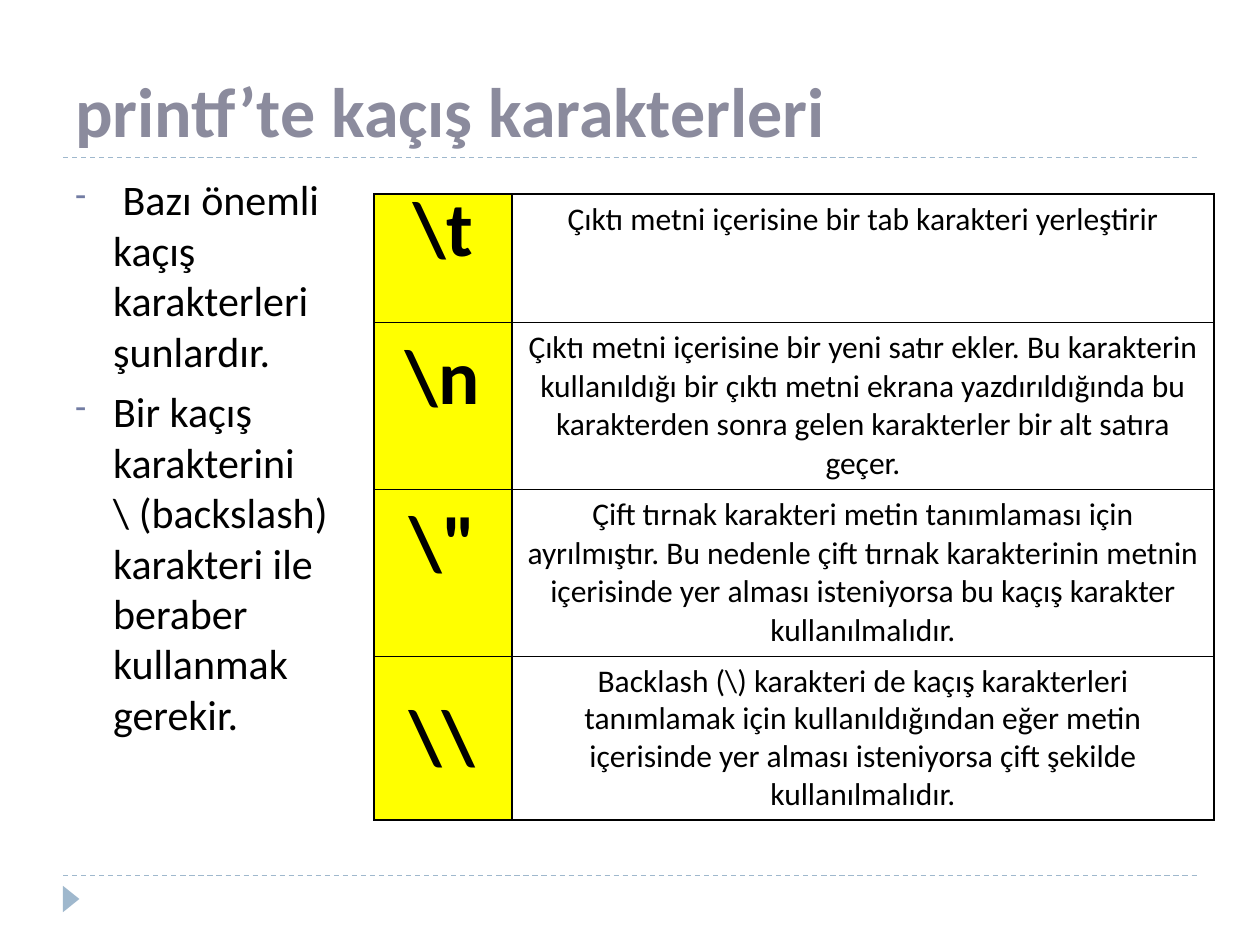
from lxml import etree
from pptx import Presentation
from pptx.dml.color import RGBColor
from pptx.enum import dml, shapes, text
from pptx.oxml import parse_xml
from pptx.oxml.ns import nsdecls, qn
from pptx.util import Pt

FONT = "Calibri"
COLORS = {"title": "8B8B9D", "ink": "000000", "rule": "9FB8CD", "bullet": "727CA3",
          "code": "FFFF00", "meaning": "FFFFFF"}

TITLE = "printf’te kaçış karakterleri"
# Each bullet is a list of lines
BULLETS = [
    [" Bazı önemli kaçış karakterleri şunlardır."],
    ["Bir kaçış karakterini", "\\ (backslash) karakteri ile beraber kullanmak gerekir."],
]
# Code, its line spacing, meaning, its line spacing, row height
TIGHT = Pt(21.6)
ESCAPES = [
    ("\\t", TIGHT, "Çıktı metni içerisine bir tab karakteri yerleştirir", None, 73.4),
    ("\\n", TIGHT, "Çıktı metni içerisine bir yeni satır ekler. Bu karakterin kullanıldığı "
     "bir çıktı metni ekrana yazdırıldığında bu karakterden sonra gelen karakterler "
     "bir alt satıra geçer.", None, 95.4),
    ("\\\"", TIGHT, "Çift tırnak karakteri metin tanımlaması için ayrılmıştır. Bu nedenle "
     "çift tırnak karakterinin metnin içerisinde yer alması isteniyorsa bu kaçış "
     "karakter kullanılmalıdır.", None, 95.4),
    ("\\\\", None, "Backlash (\\) karakteri de kaçış karakterleri tanımlamak için "
     "kullanıldığından eğer metin içerisinde yer alması isteniyorsa çift şekilde "
     "kullanılmalıdır.", TIGHT, 93.6),
]
COLUMNS = (78.8, 401.2)
RULES_Y = (90, 500.4)


def rgb(name):
    return RGBColor.from_string(COLORS[name])


def add_run(paragraph, words, size, color="ink", bold=False):
    run = paragraph.add_run()
    run.text = words
    run.font.name, run.font.size, run.font.bold = FONT, Pt(size), bold
    run.font.color.rgb = rgb(color)


def add_box(slide, left, top, width, height, anchor):
    frame = slide.shapes.add_textbox(Pt(left), Pt(top), Pt(width), Pt(height)).text_frame
    frame.word_wrap = True
    frame.vertical_anchor = anchor
    return frame


def add_dash_bullet(paragraph):
    props = paragraph._p.get_or_add_pPr()
    props.set("marL", str(Pt(21.6)))
    props.set("indent", str(-Pt(21.6)))
    color = etree.SubElement(props, qn("a:buClr"))
    etree.SubElement(color, qn("a:srgbClr"), val=COLORS["bullet"])
    etree.SubElement(props, qn("a:buSzPct"), val="76000")
    etree.SubElement(props, qn("a:buChar"), char="-")


def add_rule(slide, y):
    rule = slide.shapes.add_connector(shapes.MSO_CONNECTOR.STRAIGHT,
                                      Pt(36), Pt(y), Pt(684), Pt(y))
    rule.line.color.rgb = rgb("rule")
    rule.line.width = Pt(0.75)
    rule.line.dash_style = dml.MSO_LINE.DASH
    etree.SubElement(rule._element.spPr, qn("a:effectLst"))


def add_borders(cell):
    props = cell._tc.get_or_add_tcPr()
    for place, side in enumerate(("lnL", "lnR", "lnT", "lnB")):
        props.insert(place, parse_xml(
            f'<a:{side} {nsdecls("a")} w="{Pt(1)}"><a:solidFill>'
            f'<a:srgbClr val="{COLORS["ink"]}"/></a:solidFill></a:{side}>'))


def fill_cell(cell, words, size, fill, spacing, anchor, bold):
    cell.fill.solid()
    cell.fill.fore_color.rgb = rgb(fill)
    cell.vertical_anchor = anchor
    add_borders(cell)
    paragraph = cell.text_frame.paragraphs[0]
    paragraph.alignment = text.PP_ALIGN.CENTER
    if spacing:
        paragraph.line_spacing = spacing
    add_run(paragraph, words, size, bold=bold)


def add_escape_table(slide):
    table = slide.shapes.add_table(
        len(ESCAPES), len(COLUMNS), Pt(213.8), Pt(110.9),
        Pt(sum(COLUMNS)), Pt(sum(row[-1] for row in ESCAPES))).table
    table.first_row = table.horz_banding = False
    for column, width in zip(table.columns, COLUMNS):
        column.width = Pt(width)
    for i, (code, code_spacing, meaning, meaning_spacing, height) in enumerate(ESCAPES):
        table.rows[i].height = Pt(height)
        fill_cell(table.cell(i, 0), code, 44, "code", code_spacing,
                  text.MSO_ANCHOR.MIDDLE, True)
        fill_cell(table.cell(i, 1), meaning, 18, "meaning", meaning_spacing,
                  text.MSO_ANCHOR.TOP, False)


def main():
    deck = Presentation()
    deck.slide_width, deck.slide_height = Pt(720), Pt(540)
    slide = deck.slides.add_slide(deck.slide_layouts[6])

    for y in RULES_Y:
        add_rule(slide, y)
    marker = slide.shapes.add_shape(shapes.MSO_SHAPE.ISOSCELES_TRIANGLE,
                                    Pt(33.1), Pt(509), Pt(15.1), Pt(9.4))
    marker.rotation = 90
    marker.shadow.inherit = False
    marker.fill.solid()
    marker.fill.fore_color.rgb = rgb("rule")
    marker.line.fill.background()

    title = add_box(slide, 36, 12.2, 648, 77.8, text.MSO_ANCHOR.BOTTOM)
    add_run(title.paragraphs[0], TITLE, 40, "title", True)

    body = add_box(slide, 36, 95.8, 177.8, 388.8, text.MSO_ANCHOR.TOP)
    for i, lines in enumerate(BULLETS):
        paragraph = body.add_paragraph() if i else body.paragraphs[0]
        paragraph.space_before = Pt(6)
        add_dash_bullet(paragraph)
        for j, line in enumerate(lines):
            if j:
                paragraph.add_line_break()
            add_run(paragraph, line, 24)

    add_escape_table(slide)
    deck.save("out.pptx")


if __name__ == "__main__":
    main()
